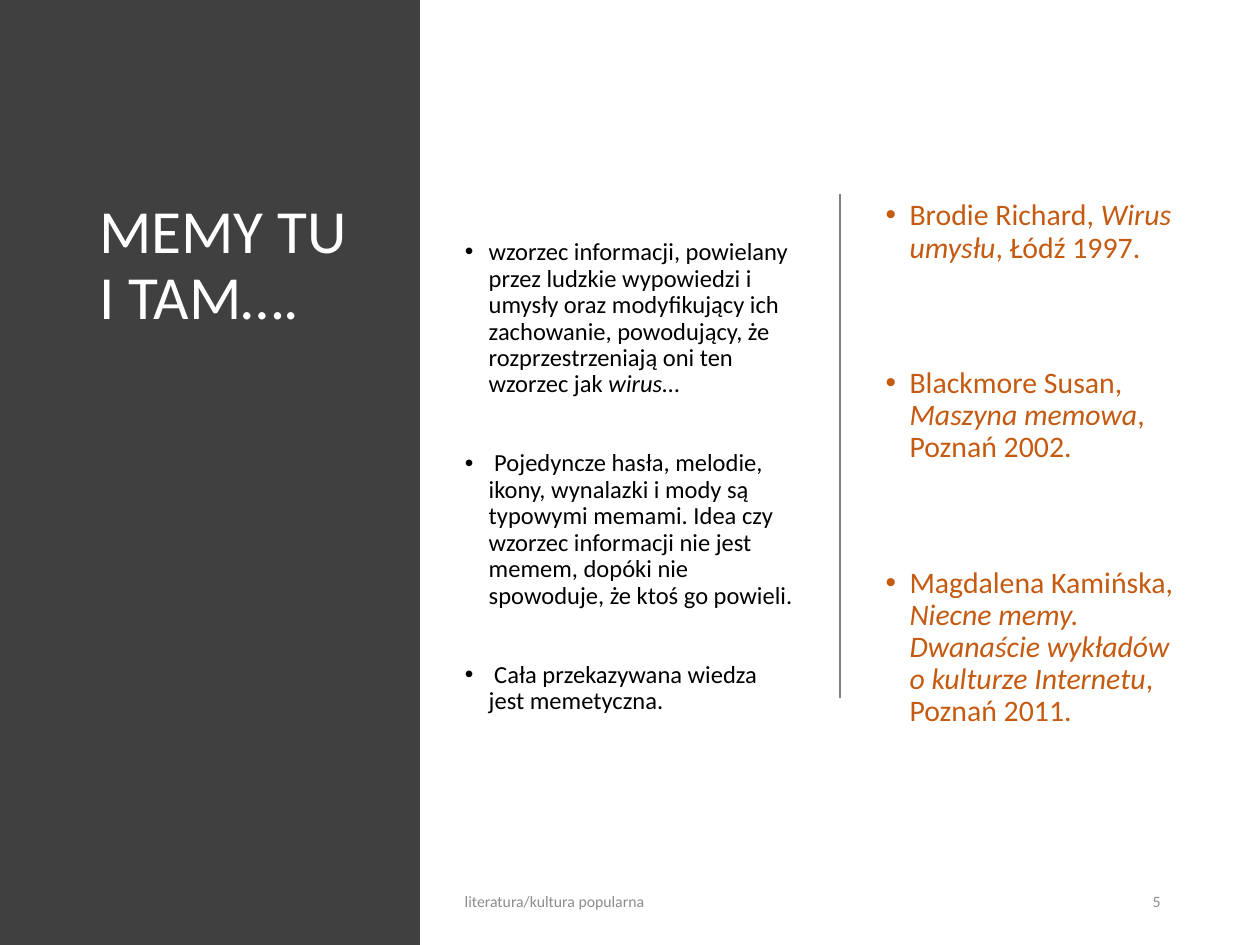
from lxml.etree import SubElement
from pptx import Presentation
from pptx.dml.color import RGBColor
from pptx.enum.shapes import MSO_CONNECTOR, MSO_SHAPE
from pptx.enum.text import MSO_ANCHOR, PP_ALIGN
from pptx.oxml.ns import qn
from pptx.util import Inches, Pt

TITLE = "MEMY TU I TAM…."
FOOTER = "literatura/kultura popularna"
PAGE_NUMBER = "5"
DEFINITIONS = [
    [("wzorzec informacji, powielany przez ludzkie wypowiedzi i umysły oraz "
      "modyfikujący ich zachowanie, powodujący, że rozprzestrzeniają oni ten "
      "wzorzec jak ", False), ("wirus", True), ("…", False)],
    [(" Pojedyncze hasła, melodie, ikony, wynalazki i mody są typowymi memami. "
      "Idea czy wzorzec informacji nie jest memem, dopóki nie spowoduje, że "
      "ktoś go powieli.", False)],
    [(" Cała przekazywana wiedza jest memetyczna.", False)],
]
BOOKS = [
    [("Brodie Richard, ", False), ("Wirus umysłu", True), (", Łódź 1997.", False)],
    [("Blackmore Susan, ", False), ("Maszyna memowa", True), (", Poznań 2002.", False)],
    [("Magdalena Kamińska, ", False),
     ("Niecne memy. Dwanaście wykładów o kulturze Internetu", True),
     (", Poznań 2011.", False)],
]

THEME = {
    "font": "Calibri",
    "panel": "404040",
    "divider": "808080",
    "title": (35, "FFFFFF"),
    "definitions": (14, "000000"),
    "books": (17, "C55A11"),
    "footer": (9, "8C8C8C"),
}
WIDTH, HEIGHT = 10, 7.5
PANEL_WIDTH = WIDTH / 3
DIVIDER_X = 2 * PANEL_WIDTH
TOP, BODY_HEIGHT, DIVIDER_LENGTH = 1.54, 4.77, 4
DEFINITIONS_LEFT = 3.59
FOOTER_TOP, FOOTER_HEIGHT = 6.95, 0.4
LINE_SPACING = 0.9
BULLET_INDENT = 0.19


def add_text_box(slide, left, top, width, height):
    box = slide.shapes.add_textbox(*map(Inches, (left, top, width, height)))
    box.text_frame.word_wrap = True
    return box.text_frame


def style_run(run, style, italic=False):
    size, color = THEME[style]
    run.font.name = THEME["font"]
    run.font.size = Pt(size)
    run.font.italic = italic
    run.font.color.rgb = RGBColor.from_string(color)


def add_label(slide, text, style, area, align=PP_ALIGN.LEFT, anchor=MSO_ANCHOR.TOP):
    text_frame = add_text_box(slide, *area)
    text_frame.text = text
    text_frame.vertical_anchor = anchor
    paragraph = text_frame.paragraphs[0]
    paragraph.alignment = align
    paragraph.line_spacing = LINE_SPACING if style == "title" else 1.0
    style_run(paragraph.runs[0], style)


def add_bullet(paragraph):
    properties = paragraph._p.get_or_add_pPr()
    properties.set("marL", str(Inches(BULLET_INDENT)))
    properties.set("indent", str(-Inches(BULLET_INDENT)))
    SubElement(properties, qn("a:buFont")).set("typeface", "Arial")
    SubElement(properties, qn("a:buChar")).set("char", "•")


def add_bullet_list(slide, items, style, area, gap, top_inset=0.05):
    text_frame = add_text_box(slide, *area)
    text_frame.margin_top = Inches(top_inset)
    for index, item in enumerate(items):
        paragraph = text_frame.add_paragraph() if index else text_frame.paragraphs[0]
        paragraph.line_spacing = LINE_SPACING
        paragraph.space_before = Pt(gap if index else 0)
        add_bullet(paragraph)
        for text, italic in item:
            run = paragraph.add_run()
            run.text = text
            style_run(run, style, italic)


def add_panel(slide):
    panel = slide.shapes.add_shape(
        MSO_SHAPE.RECTANGLE, 0, 0, Inches(PANEL_WIDTH), Inches(HEIGHT))
    panel.shadow.inherit = False
    panel.fill.solid()
    panel.fill.fore_color.rgb = RGBColor.from_string(THEME["panel"])
    panel.line.fill.background()


def add_divider(slide):
    divider = slide.shapes.add_connector(
        MSO_CONNECTOR.STRAIGHT, Inches(DIVIDER_X), Inches(TOP),
        Inches(DIVIDER_X), Inches(TOP + DIVIDER_LENGTH))
    divider.line.color.rgb = RGBColor.from_string(THEME["divider"])
    divider.line.width = Pt(1)
    SubElement(divider._element.spPr, qn("a:effectLst"))


def main():
    presentation = Presentation()
    presentation.slide_width = Inches(WIDTH)
    presentation.slide_height = Inches(HEIGHT)
    slide = presentation.slides.add_slide(presentation.slide_layouts[6])

    add_panel(slide)
    add_label(slide, TITLE, "title", (0.69, TOP, 2.38, BODY_HEIGHT))
    add_bullet_list(slide, DEFINITIONS, "definitions",
                    (DEFINITIONS_LEFT, TOP, 2.81, BODY_HEIGHT), 30, 0.36)
    add_divider(slide)
    add_bullet_list(slide, BOOKS, "books", (6.93, TOP, 2.62, BODY_HEIGHT), 59)
    add_label(slide, FOOTER, "footer",
              (DEFINITIONS_LEFT, FOOTER_TOP, 3.33, FOOTER_HEIGHT),
              anchor=MSO_ANCHOR.MIDDLE)
    add_label(slide, PAGE_NUMBER, "footer", (7.55, FOOTER_TOP, 1.76, FOOTER_HEIGHT),
              PP_ALIGN.RIGHT, MSO_ANCHOR.MIDDLE)
    presentation.save("out.pptx")


if __name__ == "__main__":
    main()
